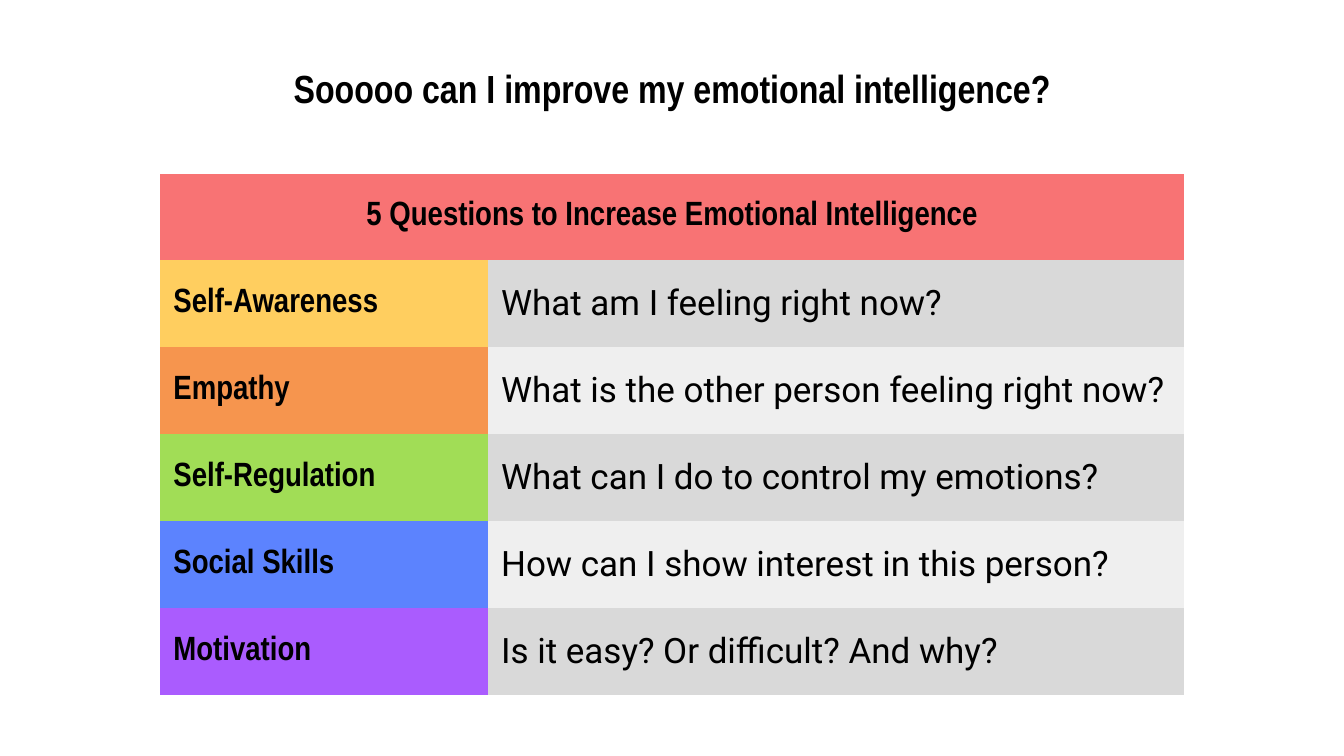
from dataclasses import dataclass

from pptx import Presentation
from pptx import util as u
from pptx.dml import color
from pptx.enum import text

PLAIN_GRID = "{2D5ABB26-0587-4C30-8999-92F81FD0307C}"  # no style, no grid


@dataclass(frozen=True)
class Theme:
    ink: str = "000000"
    head: str = "F87374"
    bands: tuple = ("D9D9D9", "EFEFEF")
    bold: str = "Arial Narrow"
    body: str = "Roboto"
    title_size: int = 28
    label_size: int = 24
    body_size: int = 25
    inset: float = 0.13


class Deck:
    """Holds the theme and the slide; lengths are percent of the slide's size."""

    def __init__(self, theme):
        self.theme = theme
        self.prs = Presentation()
        self.prs.slide_width = u.Inches(13.33)
        self.prs.slide_height = u.Inches(7.5)
        self.slide = self.prs.slides.add_slide(self.prs.slide_layouts[6])

    def wide(self, share):
        return round(self.prs.slide_width * share / 100)

    def high(self, share):
        return round(self.prs.slide_height * share / 100)

    def box(self, left, top, width, height):
        return self.wide(left), self.high(top), self.wide(width), self.high(height)

    def label(self, frame, words, size, bold=True, center=False):
        frame.text = words
        para = frame.paragraphs[0]
        para.alignment = text.PP_ALIGN.CENTER if center else text.PP_ALIGN.LEFT
        font = para.runs[0].font
        font.name = self.theme.bold if bold else self.theme.body
        font.size = u.Pt(size)
        font.bold = bold
        font.color.rgb = color.RGBColor.from_string(self.theme.ink)

    def inset(self, item):
        """Set equal margins and middle anchor on a text frame or a cell."""
        margin = u.Inches(self.theme.inset)
        item.margin_left = item.margin_right = margin
        item.margin_top = item.margin_bottom = margin
        item.vertical_anchor = text.MSO_ANCHOR.MIDDLE

    def title(self, words, *place):
        frame = self.slide.shapes.add_textbox(*self.box(*place)).text_frame
        frame.word_wrap = True
        self.inset(frame)
        self.label(frame, words, self.theme.title_size, center=True)

    def cell(self, cell, words, fill, size, **style):
        self.inset(cell)
        cell.fill.solid()
        cell.fill.fore_color.rgb = color.RGBColor.from_string(fill)
        self.label(cell.text_frame, words, size, **style)

    def table(self, head, rows, left, top, cols, step):
        """Draw a merged heading above rows of (label, fill, question)."""
        theme = self.theme
        count = len(rows) + 1
        place = self.box(left, top, sum(cols), step * count)
        frame = self.slide.shapes.add_table(count, len(cols), *place)
        table = frame.table
        table.first_row = table.horz_banding = False
        frame.element.xpath(".//a:tableStyleId")[0].text = PLAIN_GRID
        for col, share in zip(table.columns, cols):
            col.width = self.wide(share)
        for row in table.rows:
            row.height = self.high(step)

        table.cell(0, 0).merge(table.cell(0, len(cols) - 1))
        self.cell(table.cell(0, 0), head, theme.head, theme.label_size, center=True)
        for i, (label, fill, question) in enumerate(rows):
            band = theme.bands[i % len(theme.bands)]
            self.cell(table.cell(i + 1, 0), label, fill, theme.label_size)
            self.cell(table.cell(i + 1, 1), question, band, theme.body_size, bold=False)


SKILLS = [
    ("Self-Awareness", "FFCE5F", "What am I feeling right now?"),
    ("Empathy", "F6954E", "What is the other person feeling right now?"),
    ("Self-Regulation", "A1DD56", "What can I do to control my emotions?"),
    ("Social Skills", "5C83FE", "How can I show interest in this person?"),
    ("Motivation", "AA5CFE", "Is it easy? Or difficult? And why?"),
]


def main():
    deck = Deck(Theme())
    deck.title("Sooooo can I improve my emotional intelligence?", 5, 8, 90, 7.2)
    deck.table("5 Questions to Increase Emotional Intelligence", SKILLS,
               left=11.93, top=22.95, cols=(24.38, 51.76), step=11.51)
    deck.prs.save("out.pptx")


if __name__ == "__main__":
    main()
